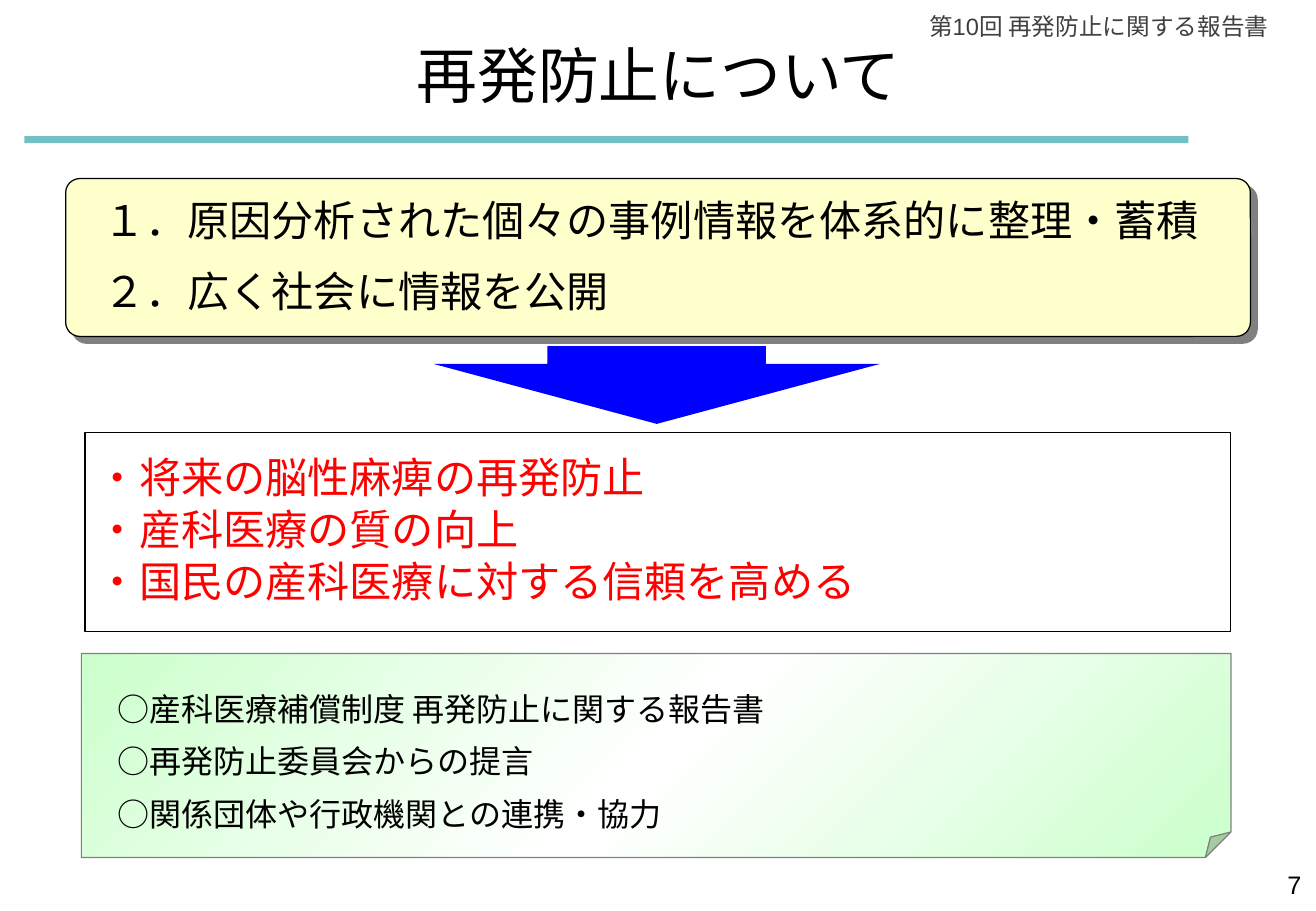
from copy import deepcopy
from dataclasses import dataclass

from lxml import etree
from pptx import Presentation
from pptx import util as u
from pptx.dml.color import RGBColor
from pptx.enum import shapes, text
from pptx.oxml.ns import qn


@dataclass(frozen=True)
class Theme:
    latin: str = "Arial"
    japanese: str = "Noto Sans CJK JP"
    black: str = "000000"
    header: str = "404040"
    gray: str = "808080"
    teal: str = "72BFC5"
    cream: str = "FFFFCC"
    blue: str = "0000FF"
    red: str = "FF0000"
    mint: str = "CCFFCC"
    white: str = "FFFFFF"
    title_size: float = 36
    goal_size: float = 25
    action_size: float = 19
    number_size: float = 15
    header_size: float = 14


theme = Theme()


def add_shape(kind, box, fill=None, line=None):
    shape = slide.shapes.add_shape(kind, *map(u.Inches, box))
    shape.shadow.inherit = False
    if fill:
        shape.fill.solid()
        shape.fill.fore_color.rgb = RGBColor.from_string(fill)
    else:
        shape.fill.background()
    if line:
        shape.line.color.rgb = RGBColor.from_string(line)
        shape.line.width = u.Pt(0.75)
    else:
        shape.line.fill.background()
    return shape


def write(shape, lines, size, color, font, align, spacing=None, before=0, hanging=0):
    frame = shape.text_frame
    frame.word_wrap = True
    frame.auto_size = text.MSO_AUTO_SIZE.NONE
    for index, line in enumerate(lines):
        paragraph = frame.add_paragraph() if index else frame.paragraphs[0]
        properties = paragraph._p.get_or_add_pPr()
        properties.set("marL", str(u.Inches(hanging)))
        properties.set("indent", str(-u.Inches(hanging)))
        etree.SubElement(properties, qn("a:buNone"))
        paragraph.alignment = align
        paragraph.space_before = u.Pt(before if index else 0)
        if spacing:
            paragraph.line_spacing = u.Pt(spacing)
        run = paragraph.add_run()
        run.text = line
        run.font.size = u.Pt(size)
        run.font.name = font
        run.font.color.rgb = RGBColor.from_string(color)
        east_asian = etree.Element(qn("a:ea"), typeface=theme.japanese)
        run.font._element.find(qn("a:latin")).addnext(east_asian)


deck = Presentation()
deck.slide_width, deck.slide_height = u.Inches(10.83), u.Inches(7.5)
slide = deck.slides.add_slide(deck.slide_layouts[3])
title, methods, actions = [slide.placeholders[i] for i in range(3)]
left, center, right = text.PP_ALIGN.LEFT, text.PP_ALIGN.CENTER, text.PP_ALIGN.RIGHT
preset = shapes.MSO_SHAPE

add_shape(preset.RECTANGLE, (0.2, 1.12, 9.58, 0.06), theme.teal)

methods_panel = add_shape(
    preset.ROUNDED_RECTANGLE, (0.54, 1.47, 9.75, 1.3), theme.cream, theme.black
)
methods_panel.adjustments[0] = 0.09
effects = methods_panel._element.spPr.find(qn("a:effectLst"))
shadow = etree.SubElement(
    effects, qn("a:outerShdw"), dist=str(u.Pt(5.7)), dir="2700000", algn="ctr", rotWithShape="0"
)
etree.SubElement(shadow, qn("a:srgbClr"), val=theme.gray)

goals = add_shape(preset.RECTANGLE, (0.7, 3.56, 9.43, 1.64), line=theme.black)
goals.text_frame.vertical_anchor = text.MSO_ANCHOR.TOP
goals.text_frame.margin_top = u.Inches(0.15)
write(
    goals,
    ["・将来の脳性麻痺の再発防止", "・産科医療の質の向上", "・国民の産科医療に対する信頼を高める"],
    theme.goal_size, theme.red, theme.japanese, left, spacing=30.7,
)

arrow = add_shape(preset.DOWN_ARROW, (3.57, 2.85, 3.67, 0.64), theme.blue)
arrow.adjustments[0], arrow.adjustments[1] = 0.49, 0.77

actions_panel = add_shape(
    preset.FOLDED_CORNER, (0.67, 5.38, 9.46, 1.68), theme.mint, theme.gray
)
fold = actions_panel._element.spPr.find(qn("a:prstGeom")).find(qn("a:avLst"))
etree.SubElement(fold, qn("a:gd"), name="adj", fmla="val 12500")
actions_panel.fill.gradient()
actions_panel.fill.gradient_angle = 315
first_stop = actions_panel._element.spPr.find(".//" + qn("a:gs"))
first_stop.addnext(deepcopy(first_stop))
stop_colors = (theme.mint, theme.white, theme.mint)
for stop, position, color in zip(actions_panel.fill.gradient_stops, (0, 0.5, 1), stop_colors):
    stop.position = position
    stop.color.rgb = RGBColor.from_string(color)

for placeholder, box in (
    (title, (0.97, 0.26, 8.9, 0.71)),
    (methods, (0.75, 1.52, 9.32, 1.15)),
    (actions, (0.87, 5.54, 8.46, 1.36)),
):
    slide.shapes._spTree.append(placeholder._element)
    placeholder.left, placeholder.top, placeholder.width, placeholder.height = map(u.Inches, box)

title.text_frame.vertical_anchor = text.MSO_ANCHOR.MIDDLE
write(title, ["再発防止について"], theme.title_size, theme.black, theme.latin, center)
write(
    methods,
    ["１．原因分析された個々の事例情報を体系的に整理・蓄積", "２．広く社会に情報を公開"],
    theme.goal_size, theme.black, theme.japanese, left, spacing=32, before=10.5, hanging=0.41,
)
write(
    actions,
    ["○産科医療補償制度 再発防止に関する報告書", "○再発防止委員会からの提言", "○関係団体や行政機関との連携・協力"],
    theme.action_size, theme.black, theme.japanese, left, spacing=29, before=2,
)

for line, box, size, color in (
    ("第10回 再発防止に関する報告書", (7.38, 0.05, 3.16, 0.34), theme.header_size, theme.header),
    ("7", (8.28, 7.11, 2.53, 0.52), theme.number_size, theme.black),
):
    label = slide.shapes.add_textbox(*map(u.Inches, box))
    write(label, [line], size, color, theme.latin, right)

deck.save("out.pptx")
